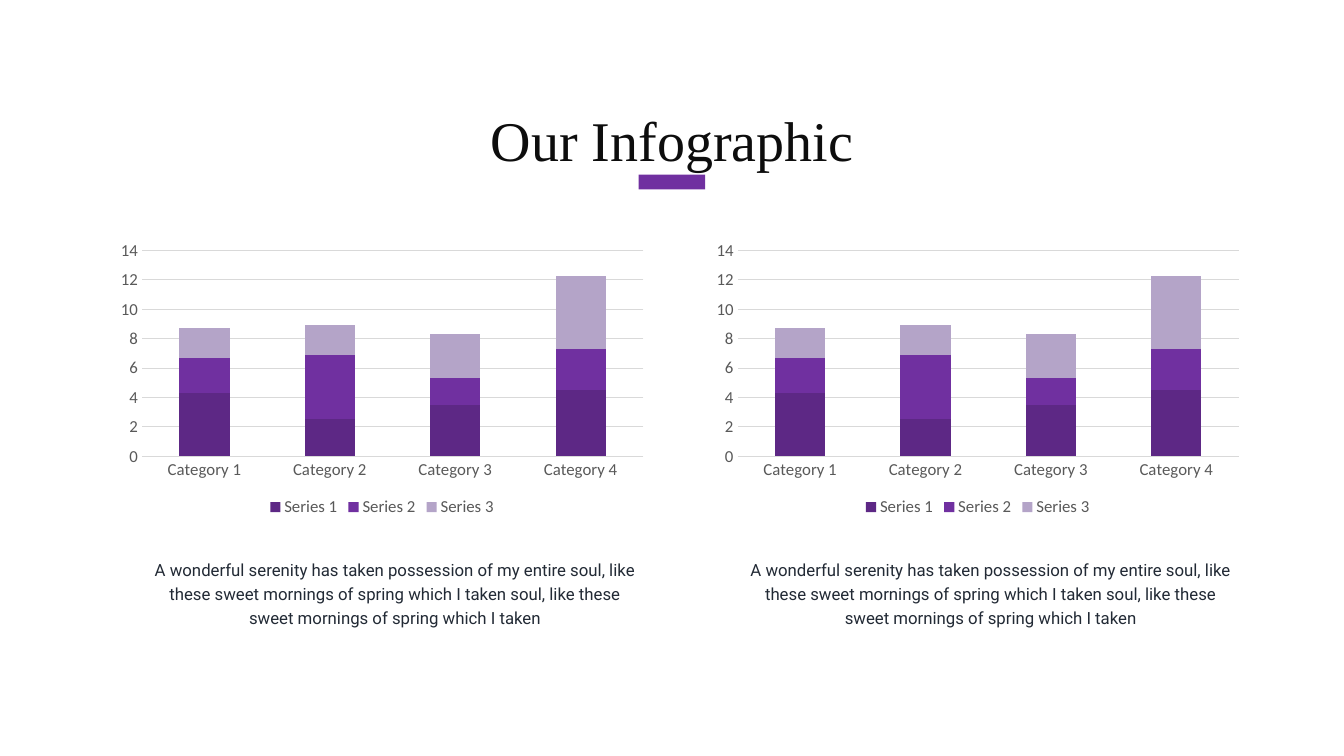
from pptx import Presentation
from pptx.chart.data import CategoryChartData
from pptx.dml.color import RGBColor
from pptx.enum.chart import XL_CHART_TYPE as ChartType, XL_LEGEND_POSITION as LegendPosition, XL_TICK_MARK as TickMark
from pptx.enum.shapes import MSO_SHAPE as Shape
from pptx.enum.text import PP_ALIGN as Align
from pptx.util import Pt

COLORS = {
    "title": "0D0D0D",
    "body": "222A35",
    "accent": "7030A0",
    "label": "595959",
    "grid": "D9D9D9",
    "dark": "5D2885",
    "light": "B4A4C8",
}
TITLE = "Our Infographic"
BODY = (
    "A wonderful serenity has taken possession of my entire soul, like these sweet "
    "mornings of spring which I taken soul, like these sweet mornings of spring which I taken"
)
CATEGORIES = ["Category 1", "Category 2", "Category 3", "Category 4"]
SERIES = [
    ("Series 1", (4.3, 2.5, 3.5, 4.5), "dark"),
    ("Series 2", (2.4, 4.4, 1.8, 2.8), "accent"),
    ("Series 3", (2, 2, 3, 5), "light"),
]
TITLE_STYLE = {"name": "Times New Roman", "size": Pt(40)}
BODY_STYLE = {"name": "Roboto", "size": Pt(12)}
CHART_STYLE = {"name": "Calibri", "size": Pt(12)}
VALUE_SCALE = {"minimum_scale": 0, "maximum_scale": 14, "major_unit": 2}

PAGE_WIDTH, PAGE_HEIGHT = 960, 540
COLUMN_LEFTS = (78.5, 504)
COLUMN_WIDTH = 388.8
BODY_INDENT = 18.7


def color(name):
    return RGBColor.from_string(COLORS[name])


def set_values(target, values):
    for name, value in values.items():
        setattr(target, name, value)


def style_font(font, style, color_name):
    set_values(font, style)
    font.color.rgb = color(color_name)


def style_line(line):
    line.width = Pt(0.75)
    line.color.rgb = color("grid")


def add_text(page, text, area, style, color_name, spacing):
    frame = page.shapes.add_textbox(*map(Pt, area)).text_frame
    frame.word_wrap = True
    para = frame.paragraphs[0]
    set_values(para, {"alignment": Align.CENTER, "line_spacing": spacing})
    span = para.add_run()
    span.text = text
    style_font(span.font, style, color_name)


def add_stacked_chart(page, area):
    data = CategoryChartData()
    data.categories = CATEGORIES
    for name, values, _ in SERIES:
        data.add_series(name, values)
    chart = page.shapes.add_chart(ChartType.COLUMN_STACKED, *map(Pt, area), data).chart
    set_values(chart, {"has_title": False, "has_legend": True})
    style_font(chart.font, CHART_STYLE, "label")
    set_values(chart.legend, {"position": LegendPosition.BOTTOM, "include_in_layout": False})
    style_font(chart.legend.font, CHART_STYLE, "label")
    plot = chart.plots[0]
    set_values(plot, {"gap_width": 150, "overlap": 100, "vary_by_categories": False})
    for series, (_, _, color_name) in zip(plot.series, SERIES):
        series.format.fill.solid()
        series.format.fill.fore_color.rgb = color(color_name)
    for axis in (chart.category_axis, chart.value_axis):
        set_values(axis, {"major_tick_mark": TickMark.NONE, "minor_tick_mark": TickMark.NONE})
        style_font(axis.tick_labels.font, CHART_STYLE, "label")
    style_line(chart.category_axis.format.line)
    set_values(chart.value_axis, VALUE_SCALE)
    chart.value_axis.format.line.fill.background()
    style_line(chart.value_axis.major_gridlines.format.line)


def main():
    deck = Presentation()
    set_values(deck, {"slide_width": Pt(PAGE_WIDTH), "slide_height": Pt(PAGE_HEIGHT)})
    page = deck.slides.add_slide(deck.slide_layouts[6])

    for left in COLUMN_LEFTS:
        add_stacked_chart(page, (left, 167.8, COLUMN_WIDTH, 204.5))
        body_area = (left + BODY_INDENT, 393.1, COLUMN_WIDTH - BODY_INDENT, 58.3)
        add_text(page, BODY, body_area, BODY_STYLE, "body", 1.2)

    title_width, bar_width = 450.7, 47.5
    title_area = ((PAGE_WIDTH - title_width) / 2, 47.5, title_width, 71.3)
    add_text(page, TITLE, title_area, TITLE_STYLE, "title", 1.5)
    bar_area = ((PAGE_WIDTH - bar_width) / 2, 124.8, bar_width, 10.6)
    bar = page.shapes.add_shape(Shape.RECTANGLE, *map(Pt, bar_area))
    bar.shadow.inherit = False
    bar.fill.solid()
    bar.fill.fore_color.rgb = color("accent")
    bar.line.fill.background()

    deck.save("out.pptx")


if __name__ == "__main__":
    main()
